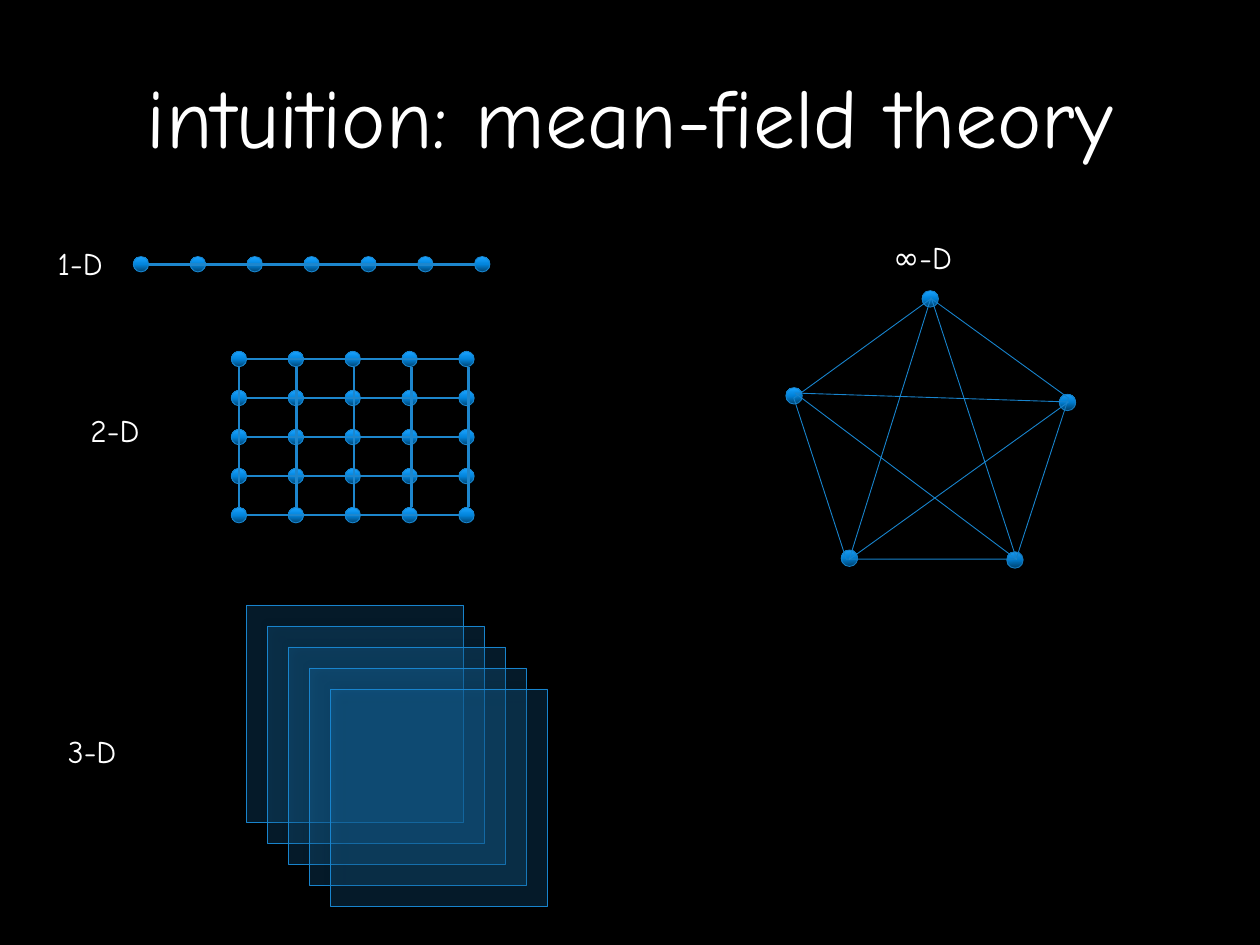
from dataclasses import dataclass
from itertools import product

from lxml import etree
from pptx import Presentation
from pptx import util as u
from pptx.dml.color import RGBColor
from pptx.enum import shapes, text
from pptx.oxml import ns

FONT = "Comic Neue"
WHITE = "FFFFFF"
EDGE = "1884CD"
LINK = "1D86CD"
GLOW = [(0, "014573"), (50, "0285DD"), (100, "1AA3FF")]
PITCH = 32.5
ROW = 22.3
DOT = 8.8


@dataclass
class Label:
    words: str
    left: float
    top: float
    width: float
    height: float = 28.8
    size: int = 18
    title: bool = False


@dataclass
class Spot:
    x: float
    y: float
    size: float = DOT


LABELS = [
    Label("intuition: mean-field theory", 54, 9.4, 612, 112.3, 48, True),
    Label("1-D", 25.9, 136.1, 41),
    Label("2-D", 44.6, 231.1, 44.6),
    Label("3-D", 31.7, 414.7, 44.6),
    Label("∞-D", 503.3, 132.5, 49),
]
NODES = [(531.6, 170.8), (485.4, 319), (580, 320), (453.8, 226.2), (610, 230)]
STAR = [(532.1, 169.9), (485.3, 319.7), (610.6, 229.7), (454.3, 224.6), (581, 319.7)]


def paint(value: str) -> RGBColor:
    return RGBColor.from_string(value)


def add(node, tag: str, **attrs):
    return etree.SubElement(node, ns.qn(tag), {k: str(v) for k, v in attrs.items()})


def shade(shape) -> None:
    effects = add(shape._element.spPr, "a:effectLst")
    shadow = add(effects, "a:outerShdw", blurRad=u.Pt(7), dist=u.Pt(4),
                 dir=35 * 60000, algn="tl", rotWithShape=0)
    add(add(shadow, "a:srgbClr", val="000000"), "a:alpha", val=55000)


def trim(shape) -> None:
    shape.line.color.rgb = paint(EDGE)
    shape.line.width = u.Pt(0.5)
    shade(shape)


def write(slide, label: Label) -> None:
    box = slide.shapes.add_textbox(
        u.Pt(label.left), u.Pt(label.top), u.Pt(label.width), u.Pt(label.height))
    frame = box.text_frame
    frame.text = label.words
    frame.word_wrap = label.title
    par = frame.paragraphs[0]
    if label.title:
        frame.vertical_anchor = text.MSO_ANCHOR.MIDDLE
        par.alignment = text.PP_ALIGN.CENTER
    else:
        frame.auto_size = text.MSO_AUTO_SIZE.SHAPE_TO_FIT_TEXT
    font = par.runs[0].font
    font.name = FONT
    font.size = u.Pt(label.size)
    font.color.rgb = paint(WHITE)


def dot(pool, spot: Spot) -> None:
    half = spot.size / 2
    shape = pool.add_shape(shapes.MSO_SHAPE.OVAL, u.Pt(spot.x - half),
                           u.Pt(spot.y - half), u.Pt(spot.size), u.Pt(spot.size))
    fill = add(shape._element.spPr, "a:gradFill", rotWithShape=1)
    stops = add(fill, "a:gsLst")
    for place, tone in GLOW:
        add(add(stops, "a:gs", pos=place * 1000), "a:srgbClr", val=tone)
    add(fill, "a:lin", ang=270 * 60000, scaled=0)
    trim(shape)


def link(pool, x1: float, y1: float, x2: float, y2: float) -> None:
    line = pool.add_connector(shapes.MSO_CONNECTOR.STRAIGHT,
                              u.Pt(x1), u.Pt(y1), u.Pt(x2), u.Pt(y2))
    line.line.color.rgb = paint(LINK)
    line.line.width = u.Pt(1.5)
    add(line._element.spPr, "a:effectLst")


def chain(pool, left: float, y: float, count: int) -> None:
    for i in range(count):
        dot(pool, Spot(left + i * PITCH, y))
    link(pool, left + (count - 1) * PITCH - DOT / 2, y, left + DOT / 2, y)


def grid(pool, left: float, top: float, count: int) -> None:
    for i in range(count):
        chain(pool, left, top + i * ROW, count)
    low = top + (count - 1) * ROW
    for i in range(count):
        x = left + i * 32.8
        link(pool, x, top + DOT / 2, x, low - DOT / 2)


def stack(pool, left: float, top: float, size: float, step: float, count: int) -> None:
    for i in range(count):
        sheet = pool.add_shape(shapes.MSO_SHAPE.RECTANGLE, u.Pt(left + i * step),
                               u.Pt(top + i * step), u.Pt(size), u.Pt(size))
        sheet.fill.solid()
        sheet.fill.fore_color.rgb = paint(LINK)
        tone = sheet._element.spPr.find(".//" + ns.qn("a:srgbClr"))
        add(tone, "a:alpha", val=20000)
        trim(sheet)


def mesh(pool) -> None:
    for x, y in NODES:
        dot(pool, Spot(x, y, 9.4))
    ring = pool.add_shape(shapes.MSO_SHAPE.REGULAR_PENTAGON,
                          u.Pt(453.6), u.Pt(170.6), u.Pt(157), u.Pt(149))
    points = [(u.Pt(x), u.Pt(y)) for x, y in STAR]
    path = pool.build_freeform(*points[0])
    path.add_line_segments(points[1:], close=True)
    for shape in (ring, path.convert_to_shape()):
        shape.fill.background()
        trim(shape)


def main() -> None:
    deck = Presentation()
    deck.slide_width, deck.slide_height = u.Pt(720), u.Pt(540)
    slide = deck.slides.add_slide(deck.slide_layouts[6])
    slide.background.fill.solid()
    slide.background.fill.fore_color.rgb = paint("000000")
    for label in LABELS:
        write(slide, label)
    chain(slide.shapes.add_group_shape().shapes, 80.6, 151, 7)
    grid(slide.shapes.add_group_shape().shapes, 136.6, 205.2, 5)
    stack(slide.shapes, 140.6, 345.7, 124.3, 12, 5)
    mesh(slide.shapes)
    deck.save("out.pptx")


if __name__ == "__main__":
    main()
